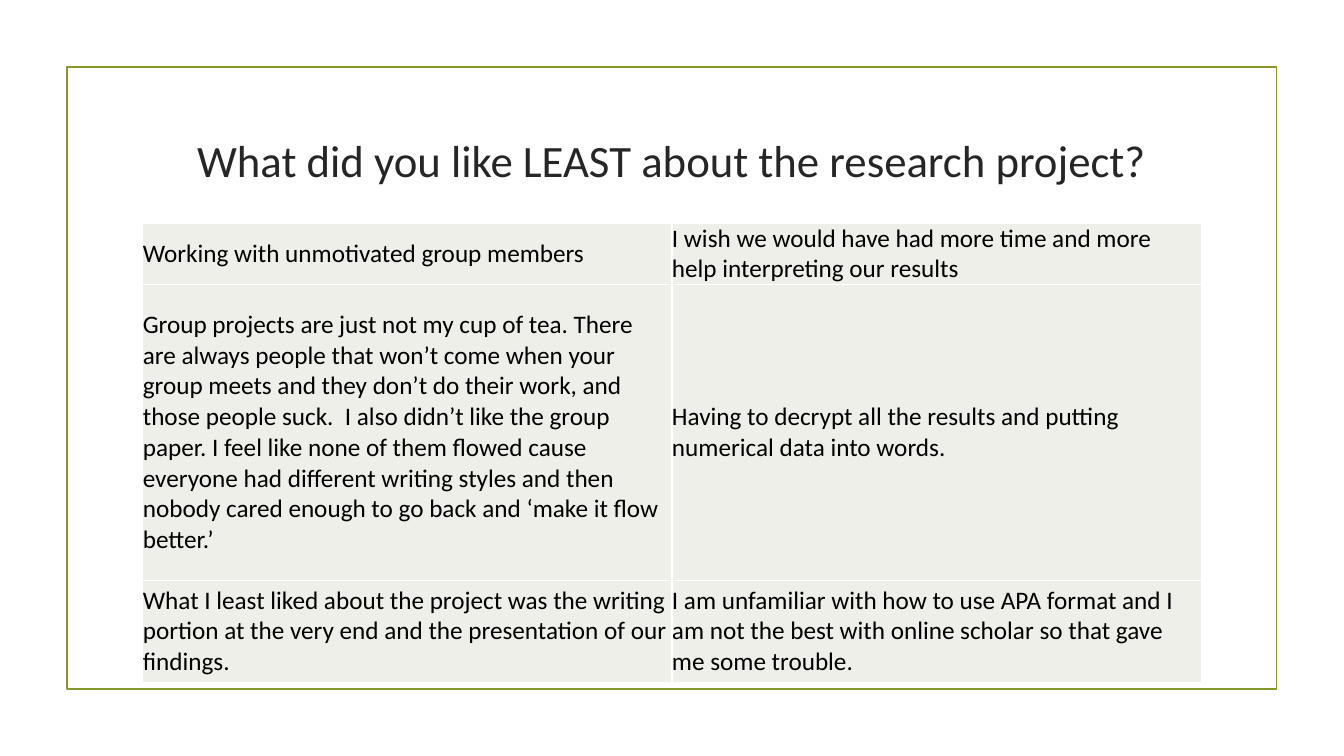
"""Build a slide with survey answers on the least liked parts of a research project."""
from lxml.etree import SubElement
from pptx import Presentation
from pptx.dml.color import RGBColor
from pptx.enum.shapes import MSO_SHAPE
from pptx.enum.text import MSO_ANCHOR, PP_ALIGN
from pptx.oxml.ns import qn
from pptx.util import Cm, Pt

GREEN = RGBColor(0x83, 0x99, 0x2A)
DARK = RGBColor(0x26, 0x26, 0x26)
BLACK = RGBColor(0x00, 0x00, 0x00)
WHITE = RGBColor(0xFF, 0xFF, 0xFF)
PALE = RGBColor(0xED, 0xEF, 0xE8)
FONT = "Calibri"

ANSWERS = [
    ("Working with unmotivated group members",
     "I wish we would have had more time and more help interpreting our results"),
    ("Group projects are just not my cup of tea. There are always people that "
     "won’t come when your group meets and they don’t do their work, and those "
     "people suck.  I also didn’t like the group paper. I feel like none of them "
     "flowed cause everyone had different writing styles and then nobody cared "
     "enough to go back and ‘make it flow better.’",
     "Having to decrypt all the results and putting numerical data into words."),
    ("What I least liked about the project was the writing portion at the very "
     "end and the presentation of our findings.",
     "I am unfamiliar with how to use APA format and I am not the best with "
     "online scholar so that gave me some trouble."),
]
ROW_HEIGHTS = [Cm(1.55), Cm(7.45), Cm(2.57)]
LEFT, WIDTH = Cm(3.6), Cm(26.67)


def style_run(r, size, color):
    r.font.name = FONT
    r.font.size = Pt(size)
    r.font.color.rgb = color


prs = Presentation()
prs.slide_width, prs.slide_height = Cm(33.87), Cm(19.05)
s = prs.slides.add_slide(prs.slide_layouts[6])

frame = s.shapes.add_shape(MSO_SHAPE.RECTANGLE, Cm(1.69), Cm(1.69), Cm(30.48), Cm(15.67))
frame.shadow.inherit = False
frame.fill.background()
frame.line.color.rgb = GREEN
frame.line.width = Pt(1.25)

title = s.shapes.add_textbox(LEFT, Cm(2.21), WIDTH, Cm(3.63))
tf = title.text_frame
tf.word_wrap = True
tf.vertical_anchor = MSO_ANCHOR.MIDDLE
tf.text = "What did you like LEAST about the research project?"
p = tf.paragraphs[0]
p.alignment = PP_ALIGN.CENTER
style_run(p.runs[0], 32, DARK)

table = s.shapes.add_table(len(ANSWERS), 2, LEFT, Cm(5.62), WIDTH, sum(ROW_HEIGHTS)).table
table.first_row = False
table.horz_banding = False
for row, height, answers in zip(table.rows, ROW_HEIGHTS, ANSWERS):
    row.height = height
    for cell, answer in zip(row.cells, answers):
        cell.text = answer
        style_run(cell.text_frame.paragraphs[0].runs[0], 18, BLACK)
        cell.vertical_anchor = MSO_ANCHOR.MIDDLE
        cell.margin_left = cell.margin_top = cell.margin_bottom = 0
        cell.margin_right = Cm(0.05)
        tcPr = cell._tc.get_or_add_tcPr()
        for side in ("lnL", "lnR", "lnT", "lnB"):
            ln = SubElement(tcPr, qn(f"a:{side}"), w=str(Pt(1)))
            SubElement(SubElement(ln, qn("a:solidFill")), qn("a:srgbClr"), val=str(WHITE))
        cell.fill.solid()
        cell.fill.fore_color.rgb = PALE

prs.save("out.pptx")
